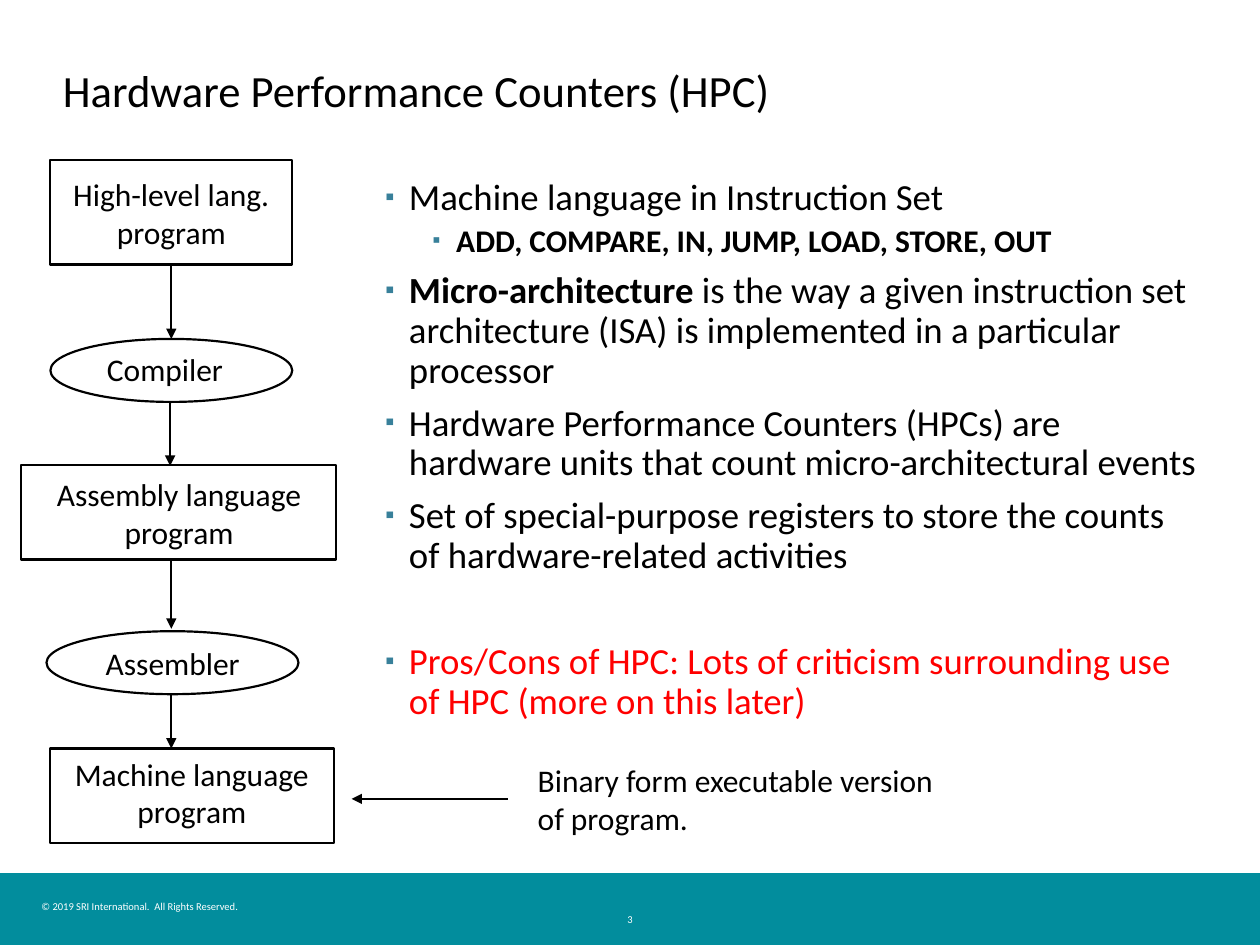
from pptx import Presentation
from pptx.dml.color import RGBColor
from pptx.enum.shapes import MSO_CONNECTOR as Connector, MSO_SHAPE as Shape
from pptx.enum.text import MSO_ANCHOR as Anchor, PP_ALIGN as Align
from pptx.oxml.ns import qn
from pptx.util import Pt
from lxml.etree import SubElement

FONT = "Calibri"
COLORS = {
    "black": "000000",
    "white": "FFFFFF",
    "red": "FF0000",
    "teal": "028D9D",
    "bullet": "38809A",
}
LINE_WIDTH = 1.25
BOTTOM = 2  # connection site of a rectangle

# Flow steps: preset, frame (left, top, width, height), label frame, label lines
STEPS = [
    (Shape.RECTANGLE, (28.8, 91.4, 138.2, 59.8), (28.8, 96.5, 138.2, 50.4),
     ["High-level lang.", "program"]),
    (Shape.OVAL, (28.8, 193.7, 138.2, 36), (51.1, 196.6, 86.4, 28.8), ["Compiler"]),
    (Shape.RECTANGLE, (12.2, 265.7, 180, 54), (16.6, 267.8, 171.4, 50.4),
     ["Assembly language", "program"]),
    (Shape.OVAL, (26.6, 360.7, 144, 36), (49, 364.3, 99.4, 28.8), ["Assembler"]),
    (Shape.RECTANGLE, (28.8, 427.7, 162, 54), (32.6, 427.7, 154, 51.1),
     ["Machine language", "program"]),
]

# Vertical arrows between the steps: x, top, bottom
FLOW_ARROWS = [
    (97.9, 151.2, 193.7),
    (97.2, 229.3, 266.2),
    (97.9, 319.7, 359.3),
    (97.9, 396, 427.7),
]

# Bullets: level, space before, colour, runs (text, bold)
BULLETS = [
    (0, 0, "black", [("Machine language in Instruction Set", False)]),
    (1, 3.8, "black", [("ADD, COMPARE, IN, JUMP, LOAD, STORE, OUT", True)]),
    (0, 7.5, "black", [
        ("Micro-architecture", True),
        (" is the way a given instruction set architecture (ISA) "
         "is implemented in a particular processor", False)]),
    (0, 7.5, "black", [
        ("Hardware Performance Counters (HPCs) are hardware units "
         "that count micro-architectural events", False)]),
    (0, 7.5, "black", [
        ("Set of special-purpose registers to store the counts "
         "of hardware-related activities", False)]),
    (0, 38, "red", [
        ("Pros/Cons of HPC: Lots of criticism surrounding use "
         "of HPC (more on this later)", False)]),
]


def rgb(name):
    return RGBColor.from_string(COLORS[name])


def set_font(font, size, color, bold=False):
    font.name = FONT
    font.size = Pt(size)
    font.bold = bold
    font.color.rgb = rgb(color)


def add_text(slide, frame, lines, size, color="black", align=Align.LEFT,
             anchor=Anchor.TOP, wrap=False, spacing=None):
    box = slide.shapes.add_textbox(*map(Pt, frame))
    text_frame = box.text_frame
    text_frame.word_wrap = wrap
    text_frame.vertical_anchor = anchor
    text_frame.text = "\n".join(lines)
    for paragraph in text_frame.paragraphs:
        paragraph.alignment = align
        paragraph.line_spacing = spacing
        for run in paragraph.runs:
            set_font(run.font, size, color)
    return box


def add_outline(slide, preset, frame):
    shape = slide.shapes.add_shape(preset, *map(Pt, frame))
    shape.shadow.inherit = False
    shape.fill.background()
    shape.line.color.rgb = rgb("black")
    shape.line.width = Pt(LINE_WIDTH)
    return shape


def add_arrow(slide, start, end):
    arrow = slide.shapes.add_connector(Connector.STRAIGHT, *map(Pt, start + end))
    arrow.line.color.rgb = rgb("black")
    arrow.line.width = Pt(LINE_WIDTH)
    SubElement(arrow.line._get_or_add_ln(), qn("a:tailEnd"), type="triangle")
    SubElement(arrow._element.spPr, qn("a:effectLst"))
    return arrow


def add_bullet_mark(paragraph, level):
    properties = paragraph._p.get_or_add_pPr()
    properties.set("marL", str(Pt(13.5 + 27 * level)))
    properties.set("indent", str(-Pt(13.5)))
    color = SubElement(properties, qn("a:buClr"))
    SubElement(color, qn("a:srgbClr"), val=COLORS["bullet"])
    SubElement(properties, qn("a:buSzPct"), val="70000")
    SubElement(properties, qn("a:buFont"), typeface=FONT)
    SubElement(properties, qn("a:buChar"), char="▪")


def add_bullets(slide, frame, bullets):
    text_frame = slide.shapes.add_textbox(*map(Pt, frame)).text_frame
    text_frame.word_wrap = True
    for index, (level, before, color, runs) in enumerate(bullets):
        paragraph = text_frame.add_paragraph() if index else text_frame.paragraphs[0]
        paragraph.level = level
        paragraph.line_spacing = 0.9
        paragraph.space_before = Pt(before)
        add_bullet_mark(paragraph, level)
        for text, bold in runs:
            run = paragraph.add_run()
            run.text = text
            set_font(run.font, 18 if level else 21, color, bold)


def add_footer(slide):
    band = slide.shapes.add_shape(Shape.RECTANGLE, Pt(0), Pt(499), Pt(720), Pt(41))
    band.shadow.inherit = False
    band.fill.solid()
    band.fill.fore_color.rgb = rgb("teal")
    band.line.fill.background()
    add_text(slide, (16.6, 510.5, 129.6, 14.4),
             ["© 2019 SRI International.  All Rights Reserved."], 6, "white")
    add_text(slide, (341.3, 513.4, 37.4, 23.8), ["3"], 6, "white",
             Align.CENTER, Anchor.MIDDLE, wrap=True)


def add_flow(slide):
    outlines = []
    for preset, frame, label_frame, lines in STEPS:
        outlines.append(add_outline(slide, preset, frame))
        add_text(slide, label_frame, lines, 18, align=Align.CENTER)
    arrows = [add_arrow(slide, (x, top), (x, bottom)) for x, top, bottom in FLOW_ARROWS]
    arrows[0].begin_connect(outlines[0], BOTTOM)


def main():
    presentation = Presentation()
    presentation.slide_width, presentation.slide_height = Pt(720), Pt(540)
    slide = presentation.slides.add_slide(presentation.slide_layouts[6])

    # Footer band, title and bullets
    add_footer(slide)
    add_text(slide, (28.8, 28.8, 642.2, 48.2), ["Hardware Performance Counters (HPC)"],
             25.5, anchor=Anchor.MIDDLE, wrap=True, spacing=0.9)
    add_bullets(slide, (213.1, 98.6, 478.8, 349.9), BULLETS)

    # Compilation flow
    add_flow(slide)

    # Note on the machine language program
    add_text(slide, (300.2, 431.3, 261.4, 50.4),
             ["Binary form executable version", "of program."], 18)
    add_arrow(slide, (290.2, 456.5), (200.9, 456.5))

    presentation.save("out.pptx")


if __name__ == "__main__":
    main()
